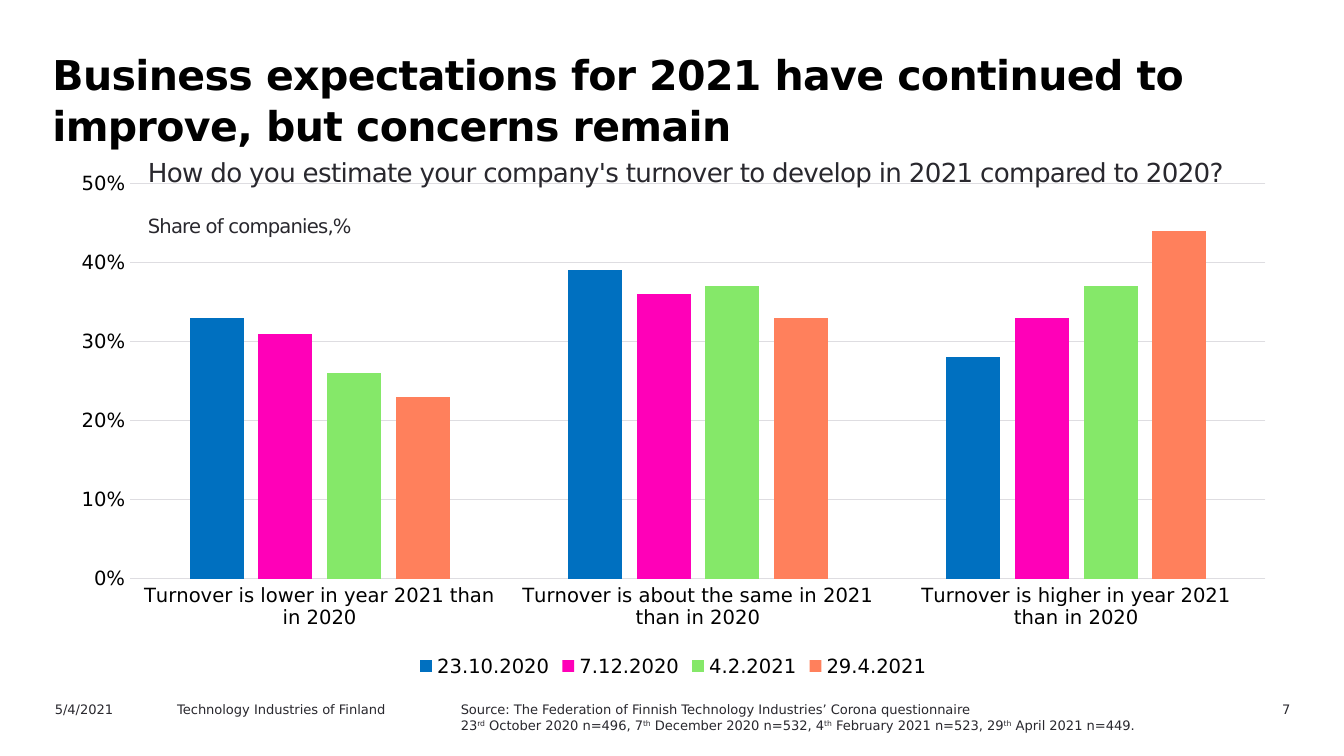
import pptx
import pptx.chart.data
import pptx.dml.color
import pptx.enum.chart
import pptx.enum.text
import pptx.oxml
import pptx.oxml.ns
import pptx.util

Inches = pptx.util.Inches
Pt = pptx.util.Pt
Align = pptx.enum.text.PP_ALIGN
Fit = pptx.enum.text.MSO_AUTO_SIZE
Ticks = pptx.enum.chart.XL_TICK_MARK

FACE = "DejaVu Sans"
HUES = {"ink": "000000", "text": "29282E", "grid": "DEDDE1", "blue": "0070C0",
        "pink": "FF00B8", "green": "85E869", "coral": "FF805C"}
CATS = ["Turnover is lower in year 2021 than in 2020",
        "Turnover is about the same in 2021 than in 2020",
        "Turnover is higher in year 2021 than in 2020"]
WAVES = [("23.10.2020", "blue", (0.33, 0.39, 0.28)),
         ("7.12.2020", "pink", (0.31, 0.36, 0.33)),
         ("4.2.2021", "green", (0.26, 0.37, 0.37)),
         ("29.4.2021", "coral", (0.23, 0.33, 0.44))]
COUNTS = [("23", "rd"), (" October 2020 n=496, 7", "th"),
          (" December 2020 n=532, 4", "th"),
          (" February 2021 n=523, 29", "th"), (" April 2021 n=449.", "")]


def rgb(hue):
    """Return the named colour."""
    return pptx.dml.color.RGBColor.from_string(HUES[hue])


def style(font, size, hue, bold=False):
    """Set face, size, colour and weight of a font."""
    font.name, font.size, font.bold = FACE, Pt(size), bold
    font.color.rgb = rgb(hue)


def write(para, text, track=0, base=0):
    """Add a run with optional tracking and raised baseline."""
    run = para.add_run()
    run.text = text
    props = run._r.get_or_add_rPr()
    if track:
        props.set("spc", str(track))
    if base:
        props.set("baseline", str(base))


def label(slide, box, text, size, align=Align.LEFT, track=0, inset=None):
    """Add a text box with one styled paragraph and return its frame."""
    frame = slide.shapes.add_textbox(*map(Inches, box)).text_frame
    frame.word_wrap = True
    if inset is not None:
        frame.margin_left = frame.margin_right = Inches(inset)
        frame.margin_top = frame.margin_bottom = Inches(inset)
        frame.auto_size = Fit.SHAPE_TO_FIT_TEXT
    para = frame.paragraphs[0]
    para.alignment = align
    style(para.font, size, "text")
    write(para, text, track)
    return frame


def head(slide, box):
    """Place and format the slide title in the box."""
    title = slide.shapes.title
    title.left, title.top, title.width, title.height = map(Inches, box)
    frame = title.text_frame
    frame.word_wrap = True
    frame.auto_size = Fit.NONE
    frame.vertical_anchor = pptx.enum.text.MSO_ANCHOR.TOP
    frame.margin_left, frame.margin_top = Inches(0.11), Inches(0.05)
    frame.margin_right = frame.margin_bottom = 0
    para = frame.paragraphs[0]
    para.alignment = Align.LEFT
    para.line_spacing = Pt(27)
    para.space_before = Pt(0)
    style(para.font, 22, "ink", True)
    write(para, "Business expectations for 2021 have continued to improve, "
                "but concerns remain", -30)


def frame_plot(chart, x, y, w, h):
    """Fix the inner plot area as fractions of the chart."""
    plot = chart._chartSpace.chart.plotArea
    for old in plot.findall(pptx.oxml.ns.qn("c:layout")):
        plot.remove(old)
    marks = [("layoutTarget", "inner"), ("xMode", "edge"), ("yMode", "edge"),
             ("x", x), ("y", y), ("w", w), ("h", h)]
    inner = "".join(f'<c:{tag} val="{val}"/>' for tag, val in marks)
    plot.insert(0, pptx.oxml.parse_xml(
        f'<c:layout {pptx.oxml.ns.nsdecls("c")}>'
        f'<c:manualLayout>{inner}</c:manualLayout></c:layout>'))


def rule(line):
    """Give a chart line the grid look."""
    line.color.rgb = rgb("grid")
    line.width = Pt(0.75)


def bars(slide, box):
    """Draw the clustered columns with the question above them."""
    left, top, width, height = box
    data = pptx.chart.data.CategoryChartData(number_format="0%")
    data.categories = CATS
    for name, hue, vals in WAVES:
        data.add_series(name, vals)
    chart = slide.shapes.add_chart(
        pptx.enum.chart.XL_CHART_TYPE.COLUMN_CLUSTERED,
        *map(Inches, box), data).chart
    style(chart.font, 10, "text")
    chart.has_title = False
    chart.has_legend = True
    chart.legend.position = pptx.enum.chart.XL_LEGEND_POSITION.BOTTOM
    chart.legend.include_in_layout = False
    style(chart.legend.font, 10.5, "ink")

    plot = chart.plots[0]
    plot.gap_width, plot.overlap = 219, -27
    plot.vary_by_categories = False
    for part, (name, hue, vals) in zip(plot.series, WAVES):
        part.format.fill.solid()
        part.format.fill.fore_color.rgb = rgb(hue)
        part.invert_if_negative = False

    cats, vals = chart.category_axis, chart.value_axis
    for axis in (cats, vals):
        axis.major_tick_mark = axis.minor_tick_mark = Ticks.NONE
        style(axis.tick_labels.font, 10.5, "ink")
    rule(cats.format.line)
    vals.format.line.fill.background()
    vals.minimum_scale, vals.maximum_scale, vals.major_unit = 0, 0.5, 0.1
    vals.tick_labels.number_format = "0%"
    vals.tick_labels.number_format_is_linked = False
    rule(vals.major_gridlines.format.line)
    frame_plot(chart, 0.06, 0.04, 0.92, 0.76)

    label(slide, (left + 0.64, top - 0.09, width - 0.99, 0.32),
          "How do you estimate your company's turnover to develop in 2021 "
          "compared to 2020?", 14, track=-40, inset=0.04)
    label(slide, (left + 0.64, top + 0.34, 1.65, 0.26),
          "Share of companies,%", 10.5, track=-40, inset=0.04)


def foot(slide, box):
    """Set date, sender, source and page number along the bottom."""
    left, top, width, height = box
    label(slide, (left, top, 1, 0.18), "5/4/2021", 7)
    label(slide, (left + 0.91, top, 1.94, 0.18),
          "Technology Industries of Finland", 7)
    label(slide, (left + width - 0.94, top, 0.94, 0.18), "7", 7, Align.RIGHT)
    frame = label(slide, (left + 3.02, top, 5.92, height),
                  "Source: The Federation of Finnish Technology Industries’ "
                  "Corona questionnaire", 7)
    para = frame.add_paragraph()
    style(para.font, 7, "text")
    for text, mark in COUNTS:
        write(para, text)
        if mark:
            write(para, mark, base=30000)


def main():
    """Build the slide and save it."""
    deck = pptx.Presentation()
    deck.slide_width, deck.slide_height = Inches(10), Inches(10 * 9 / 16)
    slide = deck.slides.add_slide(deck.slide_layouts[5])
    head(slide, (0.28, 0.31, 8.74, 0.71))
    bars(slide, (0.42, 1.21, 9.18, 3.87))
    foot(slide, (0.31, 5.17, 9.39, 0.32))
    deck.save("out.pptx")


if __name__ == "__main__":
    main()
